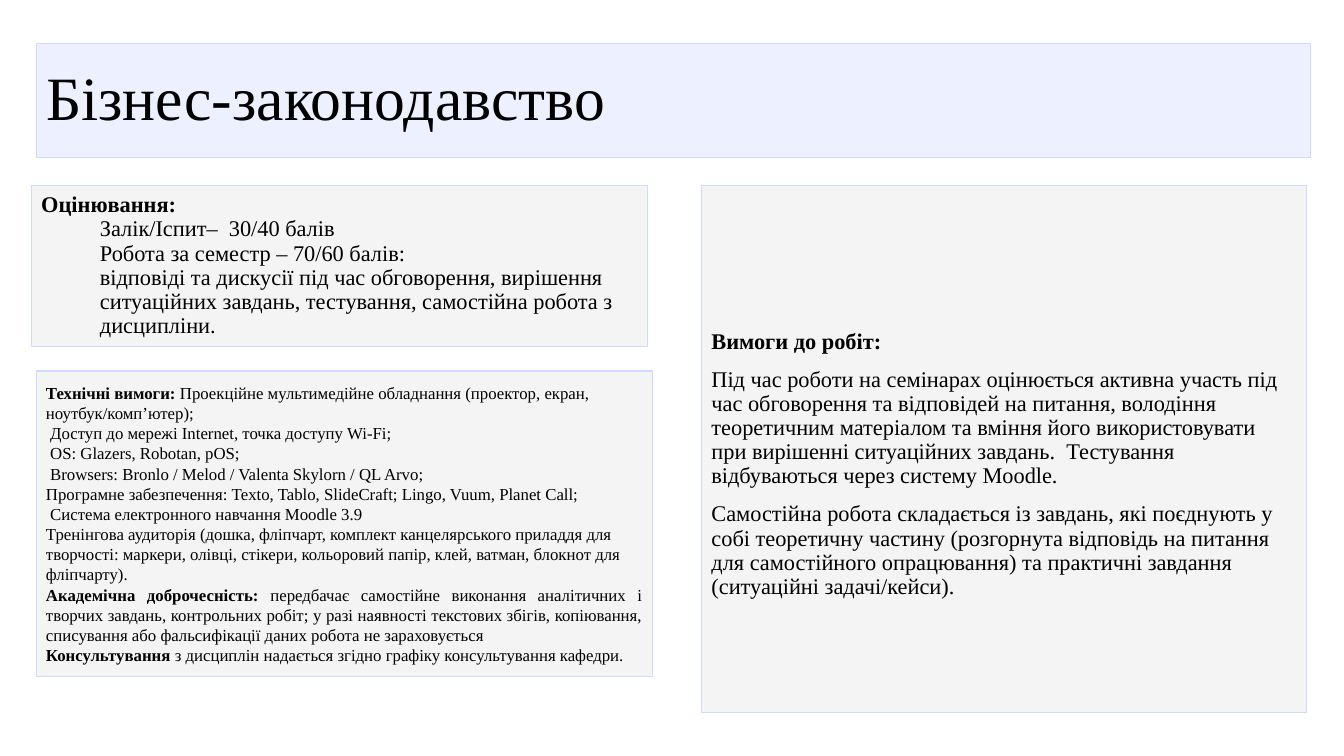
from dataclasses import dataclass

from lxml.etree import SubElement
from pptx import Presentation
from pptx.dml.color import RGBColor
from pptx.enum.text import MSO_ANCHOR, MSO_AUTO_SIZE, PP_ALIGN
from pptx.oxml.ns import qn
from pptx.util import Cm, Pt

FONT = "Times New Roman"
BLACK = RGBColor(0x00, 0x00, 0x00)
BLUE = RGBColor(0xE5, 0xEB, 0xFF)
GREY = RGBColor(0xF0, 0xF0, 0xF0)
EDGE = RGBColor(0xCD, 0xD9, 0xFF)


@dataclass
class Para:
    text: str = ""
    lead: str = ""
    line: float = 1.0
    before: float = 0
    indent: float = 0
    align: PP_ALIGN = PP_ALIGN.LEFT


@dataclass
class Panel:
    left: float
    top: float
    width: float
    height: float
    size: float
    paras: list[Para]
    fill: RGBColor = GREY
    alpha: int = 69
    inset: float = 0.13


TITLE = Panel(0.91, 1.09, 32.11, 2.87, 44,
              [Para("Бізнес-законодавство", line=0.9)], BLUE, 70)

GRADES = Panel(0.79, 4.67, 15.54, 4.06, 16, [
    Para(lead="Оцінювання:", line=0.9),
    *(Para(text, line=0.9, indent=1.48) for text in (
        "Залік/Іспит–  30/40 балів",
        "Робота за семестр – 70/60 балів:",
        "відповіді та дискусії під час обговорення, вирішення ситуаційних "
        "завдань, тестування, самостійна робота з дисципліни.",
    )),
])

NEEDS = Panel(0.91, 9.35, 15.54, 7.7, 12, [
    Para("Проекційне мультимедійне обладнання (проектор, екран, "
         "ноутбук/комп’ютер);", "Технічні вимоги: "),
    Para(" Доступ до мережі Internet, точка доступу Wi-Fi;"),
    Para(" OS: Glazers, Robotan, pOS;"),
    Para(" Browsers: Bronlo / Melod / Valenta Skylorn / QL Arvo;"),
    Para("Програмне забезпечення: Texto, Tablo, SlideCraft; Lingo, Vuum, "
         "Planet Call;"),
    Para(" Система електронного навчання Moodle 3.9"),
    Para("Тренінгова аудиторія (дошка, фліпчарт, комплект канцелярського "
         "приладдя для творчості: маркери, олівці, стікери, кольоровий папір, "
         "клей, ватман, блокнот для фліпчарту)."),
    Para(" передбачає самостійне виконання аналітичних і творчих завдань, "
         "контрольних робіт; у разі наявності текстових збігів, копіювання, "
         "списування або фальсифікації даних робота не зараховується",
         "Академічна доброчесність:", align=PP_ALIGN.JUSTIFY),
    Para(" з дисциплін надається згідно графіку консультування кафедри.",
         "Консультування", align=PP_ALIGN.JUSTIFY),
])

TASKS = Panel(17.68, 4.67, 15.24, 13.28, 16, [
    Para(lead="Вимоги до робіт:"),
    Para("Під час роботи на семінарах оцінюється активна участь під час "
         "обговорення та відповідей на питання, володіння теоретичним "
         "матеріалом та вміння його використовувати при вирішенні "
         "ситуаційних завдань.  Тестування відбуваються через систему Moodle.",
         line=0.9, before=10),
    Para("Самостійна робота складається із завдань, які поєднують у собі "
         "теоретичну частину (розгорнута відповідь на питання для "
         "самостійного опрацювання) та практичні завдання (ситуаційні "
         "задачі/кейси).", line=0.9, before=10),
], inset=0.85)


def write(target, para: Para, size: float) -> None:
    """Fill one paragraph with its bold lead and plain text."""
    target.alignment = para.align
    target.line_spacing = para.line
    target.space_before = Pt(para.before)
    if para.indent:
        target._p.get_or_add_pPr().set("marL", str(Cm(para.indent)))
    for text, bold in ((para.lead, True), (para.text, False)):
        if text:
            run = target.add_run()
            run.text = text
            run.font.name = FONT
            run.font.size = Pt(size)
            run.font.bold = bold
            run.font.color.rgb = BLACK


def dress(shape, panel: Panel) -> None:
    """Place, colour and fill a title or text box."""
    shape.left, shape.top = Cm(panel.left), Cm(panel.top)
    shape.width, shape.height = Cm(panel.width), Cm(panel.height)
    shape.fill.solid()
    shape.fill.fore_color.rgb = panel.fill
    tint = shape._element.spPr.find(qn("a:solidFill"))[0]
    SubElement(tint, qn("a:alpha")).set("val", str(panel.alpha * 1000))
    shape.line.color.rgb = EDGE
    shape.line.width = Pt(0.75)
    frame = shape.text_frame
    frame.word_wrap = True
    frame.auto_size = MSO_AUTO_SIZE.NONE
    frame.vertical_anchor = MSO_ANCHOR.MIDDLE
    frame.margin_left = frame.margin_right = Cm(0.25)
    frame.margin_top, frame.margin_bottom = Cm(panel.inset), Cm(0.13)
    for index, para in enumerate(panel.paras):
        target = frame.add_paragraph() if index else frame.paragraphs[0]
        write(target, para, panel.size)


def main() -> None:
    deck = Presentation()
    deck.slide_width, deck.slide_height = Cm(33.87), Cm(19.05)
    slide = deck.slides.add_slide(deck.slide_layouts[5])
    dress(slide.shapes.title, TITLE)
    for panel in (GRADES, NEEDS, TASKS):
        dress(slide.shapes.add_textbox(0, 0, 0, 0), panel)
    deck.save("out.pptx")


if __name__ == "__main__":
    main()
